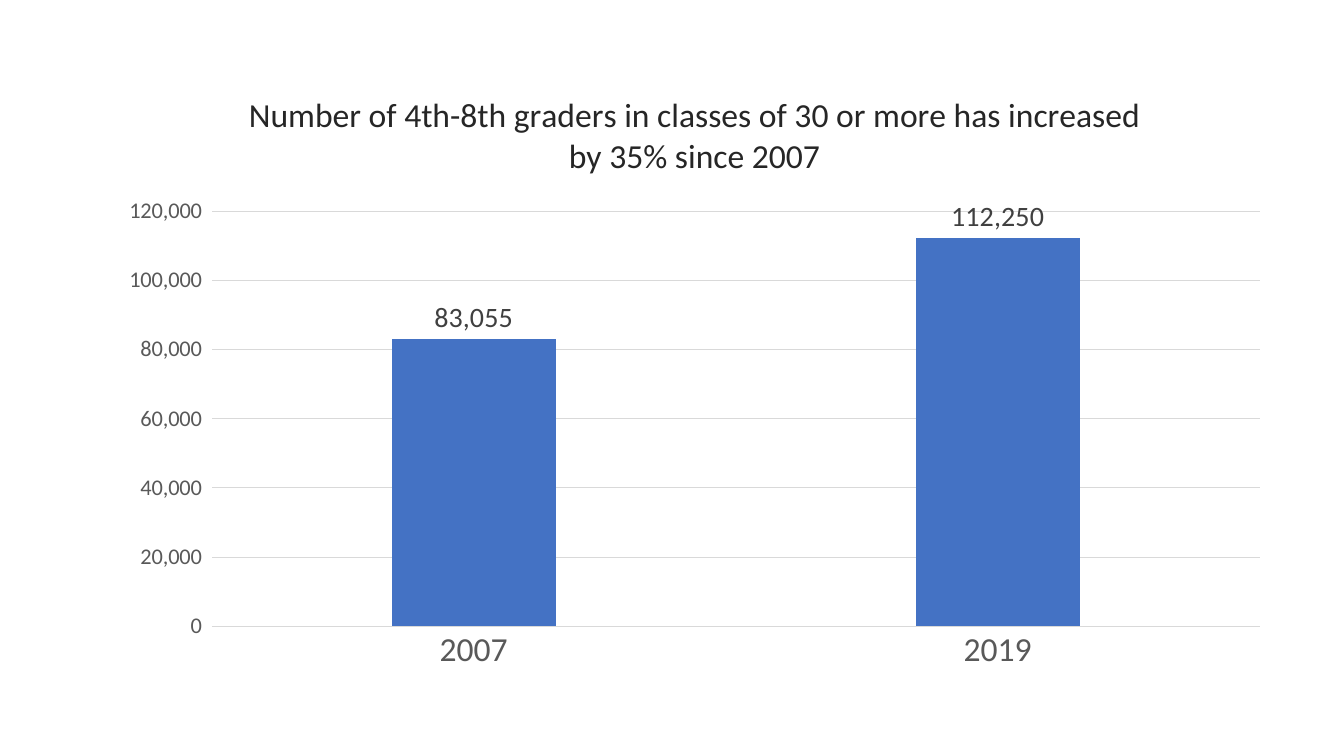
from pptx import Presentation
from pptx.chart.data import CategoryChartData
from pptx.dml.color import RGBColor
from pptx.enum.chart import XL_CHART_TYPE, XL_LABEL_POSITION, XL_TICK_MARK
from pptx.oxml import parse_xml
from pptx.oxml.ns import nsdecls
from pptx.util import Pt

COLUMNS = XL_CHART_TYPE.COLUMN_CLUSTERED
OUTSIDE_END = XL_LABEL_POSITION.OUTSIDE_END
TICK_NONE = XL_TICK_MARK.NONE
TICK_OUTSIDE = XL_TICK_MARK.OUTSIDE

THEME = {
    "font": "Calibri",
    "bar": "4472C4",
    "line": "D9D9D9",
    "title": (24, "262626"),
    "years": (24, "595959"),
    "counts": (16, "595959"),
    "labels": (20, "404040"),
}
PLOT_AREA = {"x": 0.09, "y": 0.23, "w": 0.89, "h": 0.67}


def style_font(font, role):
    size, color = THEME[role]
    font.name = THEME["font"]
    font.size = Pt(size)
    font.bold = False
    font.color.rgb = RGBColor.from_string(color)


def style_line(line):
    line.color.rgb = RGBColor.from_string(THEME["line"])
    line.width = Pt(0.75)


presentation = Presentation()
presentation.slide_width = Pt(960)
presentation.slide_height = Pt(540)
slide = presentation.slides.add_slide(presentation.slide_layouts[6])

class_sizes = CategoryChartData(number_format="#,##0")
class_sizes.categories = ["2007", "2019"]
class_sizes.add_series("Series 1", [83055, 112250])
chart = slide.shapes.add_chart(
    COLUMNS, Pt(75.6), Pt(49), Pt(841), Pt(442.8), class_sizes
).chart
chart.font.name = THEME["font"]
chart.has_legend = False

chart.has_title = True
chart.chart_title.include_in_layout = False
title = chart.chart_title.text_frame
title.text = "Number of 4th-8th graders in classes of 30 or more has increased by 35% since 2007"
style_font(title.paragraphs[0].font, "title")

year_axis = chart.category_axis
year_axis.major_tick_mark = TICK_NONE
style_line(year_axis.format.line)
style_font(year_axis.tick_labels.font, "years")

count_axis = chart.value_axis
count_axis.minimum_scale = 0
count_axis.maximum_scale = 120000
count_axis.major_unit = 20000
count_axis.major_tick_mark = TICK_OUTSIDE
count_axis.format.line.fill.background()
style_line(count_axis.major_gridlines.format.line)
style_font(count_axis.tick_labels.font, "counts")
count_axis.tick_labels.number_format = "#,##0"
count_axis.tick_labels.number_format_is_linked = False

plot = chart.plots[0]
plot.vary_by_categories = False
plot.gap_width = 219
plot.overlap = -27
bars = plot.series[0]
bars.format.fill.solid()
bars.format.fill.fore_color.rgb = RGBColor.from_string(THEME["bar"])
labels = bars.data_labels
labels.show_value = True
labels.position = OUTSIDE_END
labels.number_format = "#,##0"
labels.number_format_is_linked = False
style_font(labels.font, "labels")

plot_area = chart.element.chart.plotArea
for layout in plot_area.findall("{*}layout"):
    plot_area.remove(layout)
modes = '<c:xMode val="edge"/><c:yMode val="edge"/>'
sizes = "".join(f'<c:{key} val="{value}"/>' for key, value in PLOT_AREA.items())
plot_area.insert(0, parse_xml(
    f'<c:layout {nsdecls("c")}><c:manualLayout><c:layoutTarget val="inner"/>'
    f"{modes}{sizes}</c:manualLayout></c:layout>"
))

presentation.save("out.pptx")
